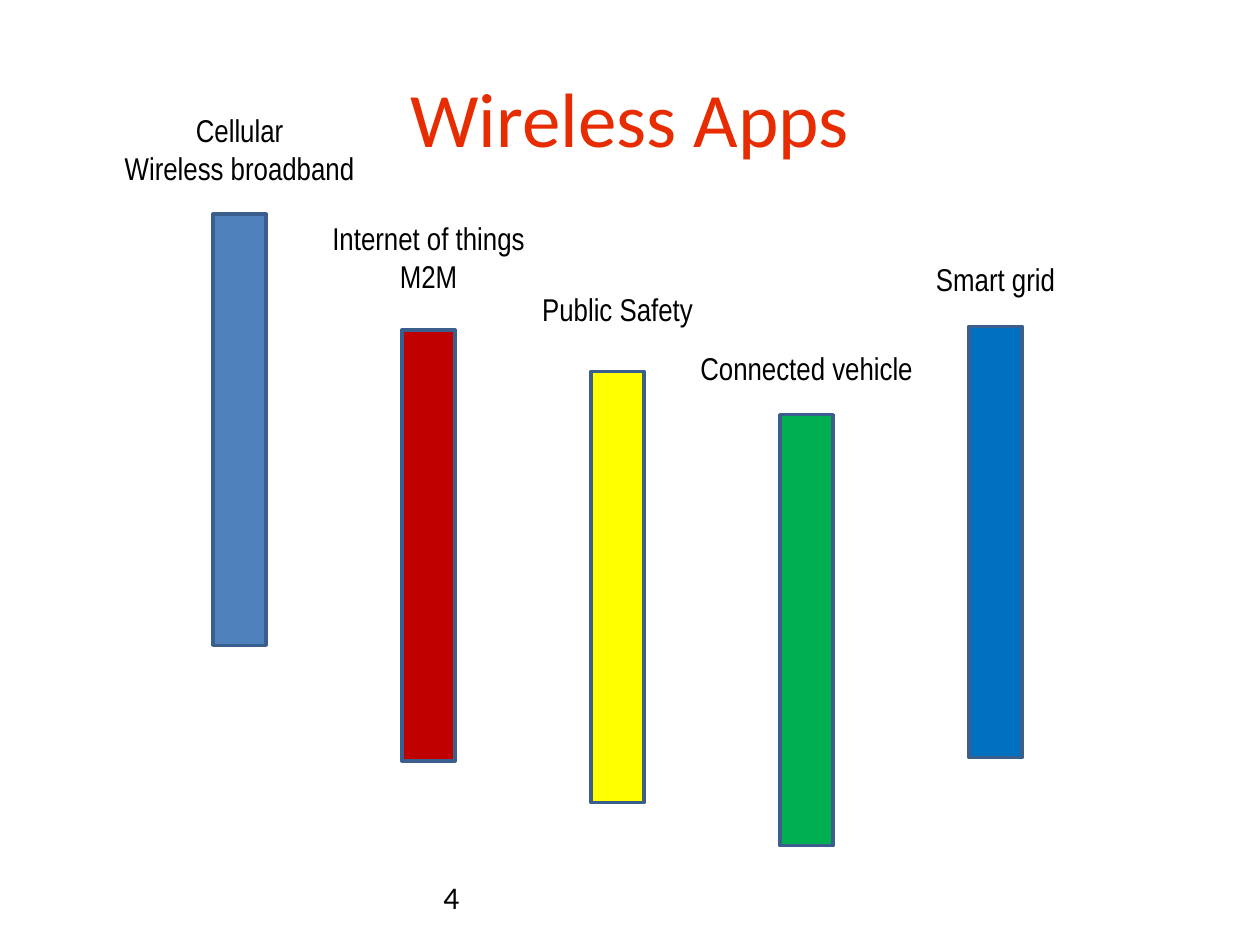
"""Build the Wireless Apps slide: five staggered bars, each with a label above it."""
from dataclasses import dataclass

from pptx import Presentation
from pptx.dml.color import RGBColor
from pptx.enum.shapes import MSO_SHAPE
from pptx.enum.text import MSO_ANCHOR, PP_ALIGN
from pptx.util import Cm, Pt

PROCESS = MSO_SHAPE.FLOWCHART_PROCESS
LEFT, CENTER = PP_ALIGN.LEFT, PP_ALIGN.CENTER
TOP, MIDDLE = MSO_ANCHOR.TOP, MSO_ANCHOR.MIDDLE


@dataclass(frozen=True)
class Theme:
    heading_font: str = "Calibri"
    label_font: str = "Arial Narrow"
    title_size: int = 44
    text_size: int = 18
    title_color: str = "E62C00"
    text_color: str = "000000"
    outline_color: str = "3A5F8C"
    outline_width: int = 2


THEME = Theme()
TITLE = "Wireless Apps"
SLIDE_NUMBER = "4"

# label lines, label top, label width, bar top, bar colour
APPS = [
    (["Cellular", "Wireless broadband"], 2.11, 5.41, 4.32, "4F81BD"),
    (["Internet of things", "M2M"], 4.29, 4.45, 6.65, "C00000"),
    (["Public Safety"], 5.72, 3.58, 7.49, "FFFF00"),
    (["Connected vehicle"], 6.91, 4.85, 8.36, "00B050"),
    (["Smart grid"], 5.11, 2.95, 6.58, "0070C0"),
]
FIRST_CENTER, PITCH = 4.83, 3.81
BAR_WIDTH, BAR_HEIGHT = 1.07, 8.69
LINE_HEIGHT, LABEL_PADDING = 0.78, 0.24


def write_text(shape, lines, font=THEME.label_font, size=THEME.text_size,
               color=THEME.text_color, align=CENTER, anchor=TOP, wrap=True):
    frame = shape.text_frame
    frame.word_wrap = wrap
    frame.vertical_anchor = anchor
    frame.text = "\n".join(lines)
    for paragraph in frame.paragraphs:
        paragraph.alignment = align
        paragraph.font.name = font
        paragraph.font.size = Pt(size)
        paragraph.font.color.rgb = RGBColor.from_string(color)


def add_title(slide):
    title = slide.shapes.title
    title.left, title.top, title.width, title.height = Cm(1.27), Cm(0.76), Cm(22.86), Cm(3.18)
    write_text(title, [TITLE], font=THEME.heading_font, size=THEME.title_size,
               color=THEME.title_color, anchor=MIDDLE)


def add_bar(slide, center, top, color):
    bar = slide.shapes.add_shape(PROCESS, Cm(center - BAR_WIDTH / 2), Cm(top),
                                 Cm(BAR_WIDTH), Cm(BAR_HEIGHT))
    bar.shadow.inherit = False
    bar.fill.solid()
    bar.fill.fore_color.rgb = RGBColor.from_string(color)
    bar.line.color.rgb = RGBColor.from_string(THEME.outline_color)
    bar.line.width = Pt(THEME.outline_width)


def add_label(slide, center, lines, top, width):
    height = LABEL_PADDING + LINE_HEIGHT * len(lines)
    label = slide.shapes.add_textbox(Cm(center - width / 2), Cm(top), Cm(width), Cm(height))
    write_text(label, lines, wrap=False)


def main():
    presentation = Presentation()
    presentation.slide_width, presentation.slide_height = Cm(25.4), Cm(19.05)
    slide = presentation.slides.add_slide(presentation.slide_layouts.get_by_name("Title Only"))
    add_title(slide)
    for index, (lines, label_top, label_width, bar_top, color) in enumerate(APPS):
        center = FIRST_CENTER + index * PITCH
        add_bar(slide, center, bar_top, color)
        add_label(slide, center, lines, label_top, label_width)
    number = slide.shapes.add_textbox(Cm(8.69), Cm(17.58), Cm(5.92), Cm(1.02))
    write_text(number, [SLIDE_NUMBER], font=THEME.heading_font, align=LEFT)
    presentation.save("out.pptx")


if __name__ == "__main__":
    main()
